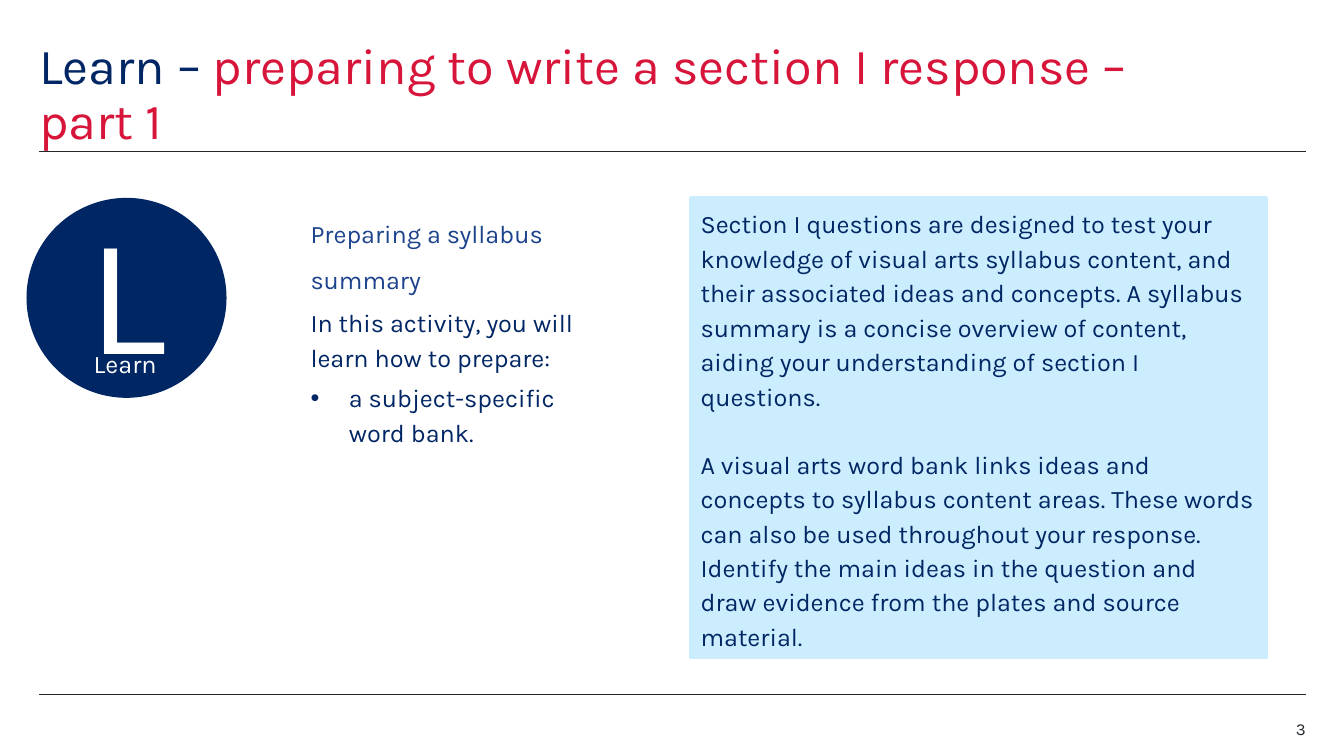
"""Build the lesson slide on preparing to write a section I response."""
from lxml.etree import SubElement
from pptx import Presentation
from pptx.dml.color import RGBColor
from pptx.enum.shapes import MSO_CONNECTOR, MSO_SHAPE
from pptx.enum.text import MSO_ANCHOR as Anchor, MSO_AUTO_SIZE as AutoSize, PP_ALIGN as Align
from pptx.oxml.ns import qn
from pptx.util import Inches, Pt

FONT = "Karla"
COLORS = {"navy": "002664", "red": "D7153A", "blue": "1C438B",
          "pale": "CBEDFD", "ink": "22272B", "white": "FFFFFF"}

TITLE = [("Learn – ", "navy"), ("preparing to write a section I response – part 1", "red")]
ACTIVITY = [
    ("Preparing a syllabus summary", "blue", 1.5, 0, False),
    ("In this activity, you will learn how to prepare:", "navy", 1.15, 6, False),
    ("a subject-specific word bank.", "navy", 1.15, 4, True),
]
EXPLANATION = [
    ("Section I questions are designed to test your knowledge of visual arts syllabus content, "
     "and their associated ideas and concepts. A syllabus summary is a concise overview of "
     "content, aiding your understanding of section I questions.", 0),
    ("A visual arts word bank links ideas and concepts to syllabus content areas. These words "
     "can also be used throughout your response. Identify the main ideas in the question and "
     "draw evidence from the plates and source material.", 24),
]
BADGE_LETTER, BADGE_LABEL, PAGE_NUMBER = "L", "Learn", "3"
LEFT, RIGHT, CONTENT_TOP = 0.39, 12.95, 1.97
RULE_HEIGHTS = (1.5, 6.89)


def color(name):
    return RGBColor.from_string(COLORS[name])


def place(shape, left, top, width, height):
    shape.left, shape.top = Inches(left), Inches(top)
    shape.width, shape.height = Inches(width), Inches(height)


def set_frame(frame, anchor, inset=None):
    frame.word_wrap = True
    frame.auto_size = AutoSize.NONE
    frame.vertical_anchor = anchor
    if inset is not None:
        frame.margin_left = frame.margin_right = Inches(inset)
        frame.margin_top = frame.margin_bottom = Inches(inset)


def paragraph_at(frame, index):
    return frame.add_paragraph() if index else frame.paragraphs[0]


def add_run(paragraph, text, size, color_name):
    run = paragraph.add_run()
    run.text = text
    run.font.name, run.font.size = FONT, Pt(size)
    run.font.color.rgb = color(color_name)


def set_spacing(paragraph, lines, before):
    paragraph.line_spacing = lines
    paragraph.space_before = Pt(before)
    paragraph.space_after = Pt(0)


def set_bullet(paragraph, bulleted):
    properties = paragraph._p.get_or_add_pPr()
    indent = Inches(0.38) if bulleted else 0
    properties.set("marL", str(indent))
    properties.set("indent", str(-indent))
    if bulleted:
        SubElement(properties, qn("a:buFont"), typeface="Arial")
        SubElement(properties, qn("a:buChar"), char="•")
    else:
        SubElement(properties, qn("a:buNone"))


def add_filled(shapes, preset, box, color_name, line_width):
    shape = shapes.add_shape(preset, *map(Inches, box))
    shape.shadow.inherit = False
    shape.fill.solid()
    shape.fill.fore_color.rgb = color(color_name)
    shape.line.color.rgb = color(color_name)
    shape.line.width = Pt(line_width)
    return shape


def add_label(shapes, box, text, size, color_name, align):
    label = shapes.add_textbox(*map(Inches, box))
    set_frame(label.text_frame, Anchor.TOP, 0)
    paragraph = label.text_frame.paragraphs[0]
    paragraph.alignment = align
    add_run(paragraph, text, size, color_name)


def add_rules(slide):
    for height in RULE_HEIGHTS:
        rule = slide.shapes.add_connector(
            MSO_CONNECTOR.STRAIGHT, Inches(LEFT), Inches(height), Inches(RIGHT), Inches(height))
        rule.line.color.rgb = color("ink")
        rule.line.width = Pt(0.5)
        SubElement(rule._element.spPr, qn("a:effectLst"))


def fill_title(title):
    place(title, LEFT, 0.39, 11.02, 1.1)
    set_frame(title.text_frame, Anchor.BOTTOM, 0)
    paragraph = title.text_frame.paragraphs[0]
    paragraph.alignment = Align.LEFT
    paragraph.line_spacing = 0.9
    for text, color_name in TITLE:
        add_run(paragraph, text, 36, color_name)


def fill_activity(body):
    place(body, 2.98, CONTENT_TOP, 3.19, 2.51)
    set_frame(body.text_frame, Anchor.TOP)
    for index, (text, color_name, lines, before, bulleted) in enumerate(ACTIVITY):
        paragraph = paragraph_at(body.text_frame, index)
        set_bullet(paragraph, bulleted)
        set_spacing(paragraph, lines, before)
        add_run(paragraph, text, 18, color_name)


def add_badge(slide):
    badge = slide.shapes.add_group_shape()
    circle = add_filled(badge.shapes, MSO_SHAPE.OVAL, (0.27, CONTENT_TOP, 1.97, 1.97), "navy", 1)
    set_frame(circle.text_frame, Anchor.MIDDLE)
    circle.text_frame.margin_bottom = Inches(0.25)
    letter = circle.text_frame.paragraphs[0]
    letter.alignment = Align.CENTER
    add_run(letter, BADGE_LETTER, 120, "white")
    add_label(badge.shapes, (0.93, 3.46, 0.73, 0.48), BADGE_LABEL, 18, "white", Align.LEFT)


def add_explanation(slide):
    panel = add_filled(slide.shapes, MSO_SHAPE.RECTANGLE, (6.85, CONTENT_TOP, 5.71, 4.55), "pale", 3)
    set_frame(panel.text_frame, Anchor.MIDDLE)
    for index, (text, before) in enumerate(EXPLANATION):
        paragraph = paragraph_at(panel.text_frame, index)
        paragraph.alignment = Align.LEFT
        set_spacing(paragraph, 1.14, before)
        add_run(paragraph, text, 18, "navy")


def main():
    deck = Presentation()
    deck.slide_width, deck.slide_height = Inches(13.33), Inches(7.5)
    slide = deck.slides.add_slide(deck.slide_layouts[1])
    add_rules(slide)
    fill_title(slide.shapes.title)
    fill_activity(slide.placeholders[1])
    add_badge(slide)
    add_explanation(slide)
    add_label(slide.shapes, (RIGHT - 0.79, 7.13, 0.79, 0.2), PAGE_NUMBER, 12, "ink", Align.RIGHT)
    deck.save("out.pptx")


if __name__ == "__main__":
    main()
